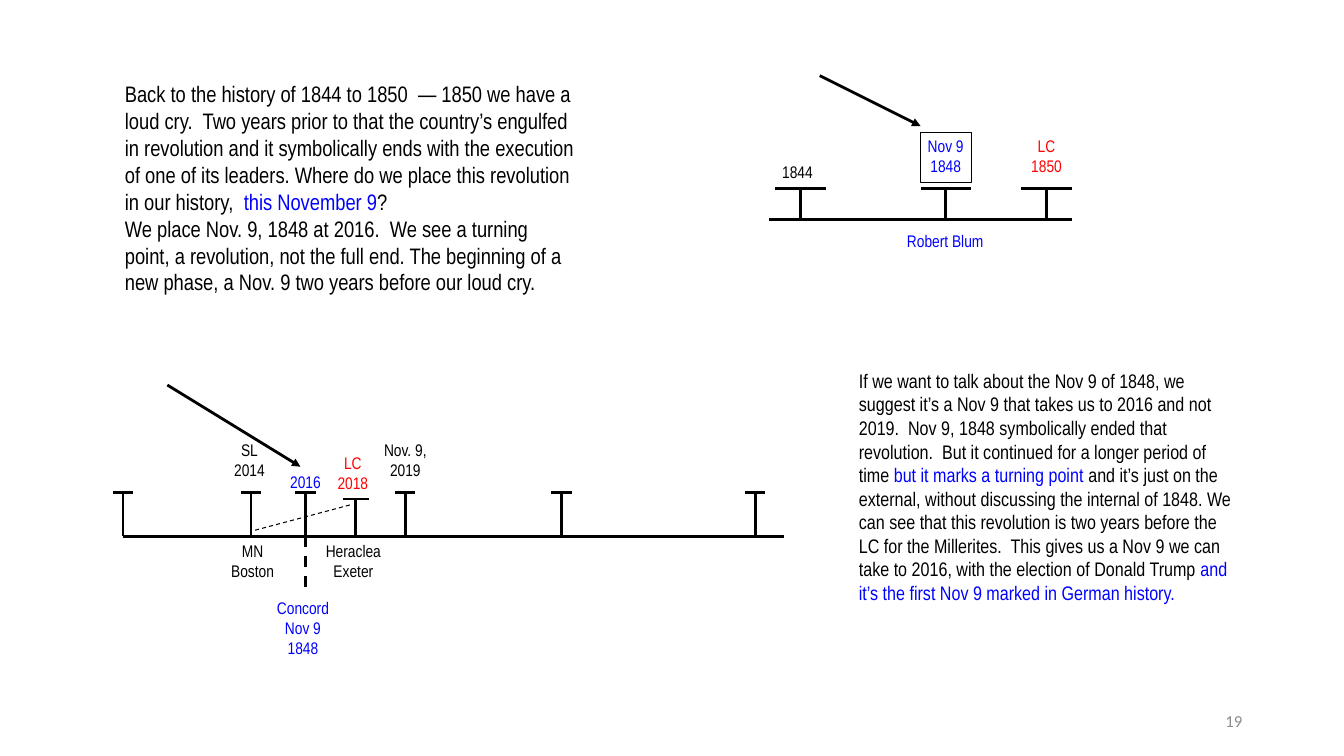
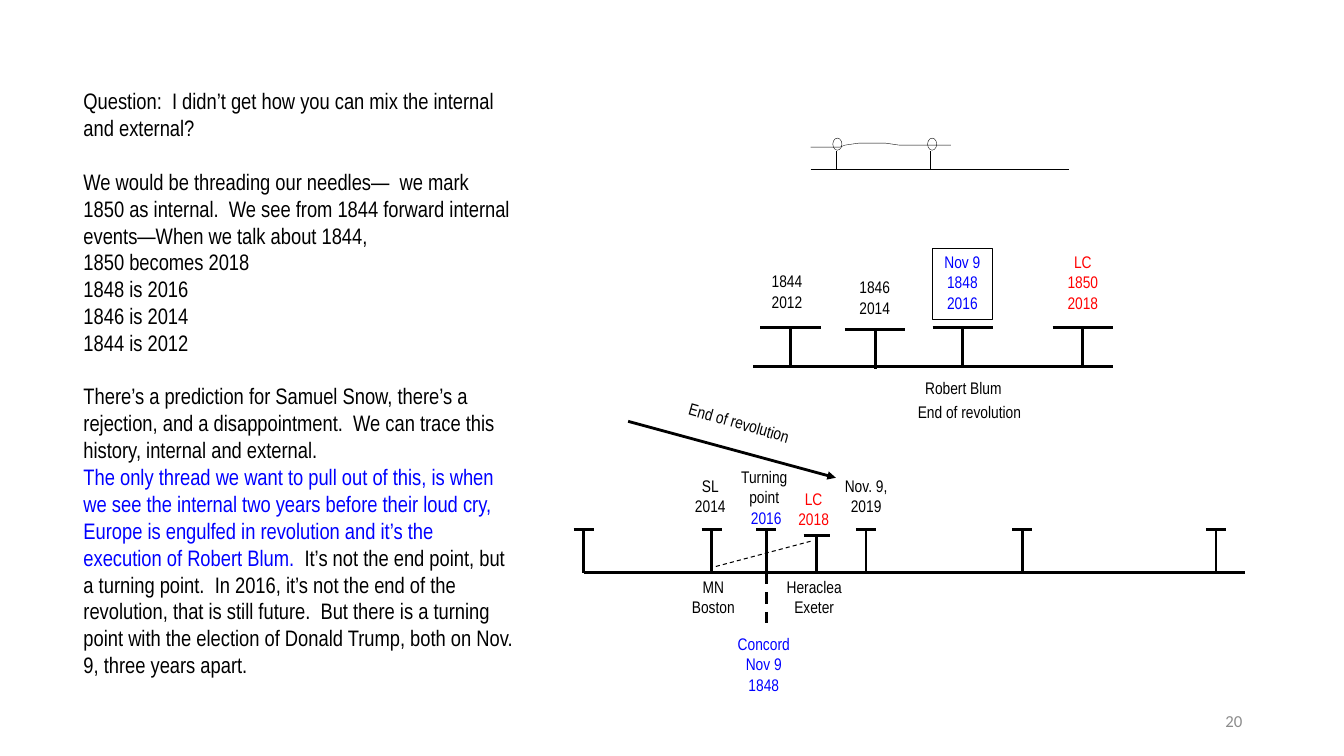
import lxml.etree
import pptx
import pptx.dml.color
import pptx.enum.dml
import pptx.enum.shapes
import pptx.enum.text
import pptx.oxml.ns
import pptx.util

PX = 9144
COLORS = {"ink": "000000", "blue": "0000FF", "red": "FF0000", "gray": "8C8C8C"}
ALIGN = pptx.enum.text.PP_ALIGN
ANCHOR = pptx.enum.text.MSO_ANCHOR
SHAPE = pptx.enum.shapes.MSO_SHAPE
DASH = pptx.enum.dml.MSO_LINE.DASH

NARROW = "Arial Narrow"
BODY = {"name": NARROW, "size": pptx.util.Pt(16)}
SMALL = {"name": NARROW, "size": pptx.util.Pt(14)}
LABEL = {"name": NARROW, "size": pptx.util.Pt(12)}
NUMBER = {"name": "Calibri", "size": pptx.util.Pt(12)}
MARGINS = ("margin_left", "margin_top", "margin_right", "margin_bottom")
TIGHT = {side: 4 * PX for side in MARGINS}
GAP = 19


def px(*values):
    return [pptx.util.Emu(value * PX) for value in values]


def rgb(name):
    return pptx.dml.color.RGBColor.from_string(COLORS[name])


def apply(item, form):
    for key, value in form.items():
        setattr(item, key, value)


def write(frame, paras, font, align=ALIGN.LEFT, form=None):
    apply(frame, {"word_wrap": True, **(form or {})})
    for index, (gap, runs) in enumerate(paras):
        para = frame.add_paragraph() if index else frame.paragraphs[0]
        apply(para, {"alignment": align, "space_before": pptx.util.Pt(gap)})
        for text, color in runs:
            run = para.add_run()
            run.text = text
            apply(run.font, font)
            run.font.color.rgb = rgb(color)


def body(slide, box, paras, font):
    write(slide.shapes.add_textbox(*px(*box)).text_frame, paras, font)


def split(text, color):
    return [(0, [(line, color)]) for line in text.split("\n")]


def label(slide, box, text, color="ink", turn=0):
    shape = slide.shapes.add_textbox(*px(*box))
    shape.rotation = turn
    write(shape.text_frame, split(text, color), LABEL, ALIGN.CENTER, TIGHT)


def stroke(line, width):
    line.color.rgb = rgb("ink")
    line.width = pptx.util.Pt(width)


def outline(shape):
    shape.shadow.inherit = False
    shape.fill.background()
    stroke(shape.line, 0.25)


def figure(slide, kind, box):
    shape = slide.shapes.add_shape(kind, *px(*box))
    outline(shape)
    return shape


def frame(slide, box, text, color):
    shape = figure(slide, SHAPE.RECTANGLE, box)
    form = {**TIGHT, "vertical_anchor": ANCHOR.TOP}
    write(shape.text_frame, split(text, color), LABEL, ALIGN.CENTER, form)


def line(slide, ends, width=2, dash=None, arrow=False):
    kind = pptx.enum.shapes.MSO_CONNECTOR.STRAIGHT
    link = slide.shapes.add_connector(kind, *px(*ends))
    stroke(link.line, width)
    if dash:
        link.line.dash_style = dash
    qn = pptx.oxml.ns.qn
    props = link.element.spPr
    if arrow:
        lxml.etree.SubElement(props.find(qn("a:ln")), qn("a:tailEnd"), type="triangle")
    lxml.etree.SubElement(props, qn("a:effectLst"))


def tick(slide, x, top, base, half):
    line(slide, (x, top, x, base))
    line(slide, (x - half, top, x + half, top))


def modern(slide, left, base):
    line(slide, (left, base, left + 656, base))
    for x in (0, 127, 181, 280, 435, 627):
        tick(slide, left + x, base - 43, base, 10)
    tick(slide, left + 231, base - 37, base, 13)
    line(slide, (left + 131, base - 6, left + 225, base - 31), 0.75, DASH)
    line(slide, (left + 181, base, left + 181, base + 57), dash=DASH)
    for x, y, wide, high, text, color in (
        (94, -100, 63, 49, "SL\n2014", "ink"),
        (156, -68, 50, 24, "2016", "blue"),
        (206, -87, 44, 49, "LC\n2018", "red"),
        (251, -100, 58, 50, "Nov. 9,\n2019", "ink"),
        (94, 0, 69, 56, "MN\nBoston", "ink"),
        (194, 0, 69, 56, "Heraclea\nExeter", "ink"),
        (144, 57, 69, 69, "Concord\nNov 9\n1848", "blue"),
    ):
        label(slide, (left + x, base + y, wide, high), text, color)


def thread(slide):
    line(slide, (804, 168, 1060, 168), 0.25)
    for x in (829, 923):
        line(slide, (x, 150, x, 168), 0.25)
        figure(slide, SHAPE.OVAL, (x - 3, 137, 9, 12))
    path = slide.shapes.build_freeform(804, 146, scale=PX)
    points = [(833, 146), (838, 144), (845, 143), (852, 142), (878, 142),
              (892, 144), (943, 144)]
    path.add_line_segments(points, close=False)
    outline(path.convert_to_shape())


def page(deck, number):
    slide = deck.slides.add_slide(deck.slide_layouts[6])
    box = slide.shapes.add_textbox(*px(942, 695, 300, 40))
    form = {"vertical_anchor": ANCHOR.MIDDLE}
    write(box.text_frame, split(str(number), "gray"), NUMBER, ALIGN.RIGHT, form)
    return slide


def place(deck):
    slide = page(deck, 19)
    body(slide, (114, 75, 469, 256), [
        (0, [("Back to the history of 1844 to 1850  — 1850 we have a loud cry.  Two years prior to that the country’s engulfed in revolution and it symbolically ends with the execution of one of its leaders. Where do we place this revolution in our history,  ", "ink"),
             ("this November 9", "blue"), ("?", "ink")]),
        (0, [("We place Nov. 9, 1848 at 2016.  We see a turning point, a revolution, not the full end. The beginning of a new phase, a Nov. 9 two years before our loud cry.", "ink")]),
    ], BODY)
    line(slide, (763, 218, 1063, 218))
    for x in (794, 938, 1038):
        tick(slide, x, 187, 218, 25)
    label(slide, (763, 156, 56, 25), "1844")
    frame(slide, (913, 131, 50, 50), "Nov 9\n1848", "blue")
    label(slide, (1013, 131, 50, 50), "LC\n1850", "red")
    label(slide, (875, 225, 125, 25), "Robert Blum", "blue")
    line(slide, (813, 75, 913, 125), arrow=True)
    modern(slide, 122, 532)
    line(slide, (166, 382, 298, 463), arrow=True)
    body(slide, (842, 361, 399, 281), [
        (0, [("If we want to talk about the Nov 9 of 1848, we suggest it’s a Nov 9 that takes us to 2016 and not 2019.  Nov 9, 1848 symbolically ended that revolution.  But it continued for a longer period of time ", "ink"),
             ("but it marks a turning point ", "blue"),
             ("and it’s just on the external, without discussing the internal of 1848. We can see that this revolution is two years before the LC for the Millerites.  This gives us a Nov 9 we can take to 2016, with the election of Donald Trump ", "ink"),
             ("and it’s the first Nov 9 marked in German history.", "blue")]),
    ], SMALL)


def answer(deck):
    slide = page(deck, 20)
    body(slide, (73, 82, 446, 633), [
        (0, [("Question:  I didn’t get how you can mix the internal and external?", "ink")]),
        (GAP, [("We would be threading our needles—  we mark 1850 as internal.  We see from 1844 forward internal events—When we talk about 1844,", "ink")]),
        *split("1850 becomes 2018\n1848 is 2016\n1846 is 2014\n1844 is 2012", "ink"),
        (GAP, [("There’s a prediction for Samuel Snow, there’s a rejection, and a disappointment.  We can trace this history, internal and external.", "ink")]),
        (0, [("The only thread we want to pull out of this, is when we see the internal two years before their loud cry, Europe is engulfed in revolution and it’s the execution of Robert Blum.  ", "blue"),
             ("It’s not the end point, but a turning point.  In 2016, it’s not the end of the revolution, that is still future.  But there is a turning point with the election of Donald Trump, both on Nov. 9, three years apart.", "ink")]),
    ], BODY)
    thread(slide)
    line(slide, (747, 364, 1104, 364))
    for x, drop in ((784, 0), (868, 2), (955, 0), (1074, 0)):
        tick(slide, x, 325 + drop, 364 + drop, 30)
    label(slide, (747, 265, 67, 52), "1844\n2012")
    label(slide, (838, 271, 59, 48), "1846\n2014")
    frame(slide, (925, 246, 59, 71), "Nov 9\n1848\n2016", "blue")
    label(slide, (1044, 246, 60, 71), "LC\n1850\n2018", "red")
    label(slide, (881, 371, 149, 31), "Robert Blum")
    label(slide, (902, 395, 119, 33), "End of revolution")
    modern(slide, 579, 568)
    line(slide, (623, 418, 829, 474), arrow=True)
    label(slide, (729, 459, 58, 50), "Turning point")
    label(slide, (673, 405, 119, 33), "End of revolution", turn=16)


def main():
    deck = pptx.Presentation()
    deck.slide_width, deck.slide_height = px(1333, 750)
    place(deck)
    answer(deck)
    deck.save("out.pptx")


if __name__ == "__main__":
    main()
